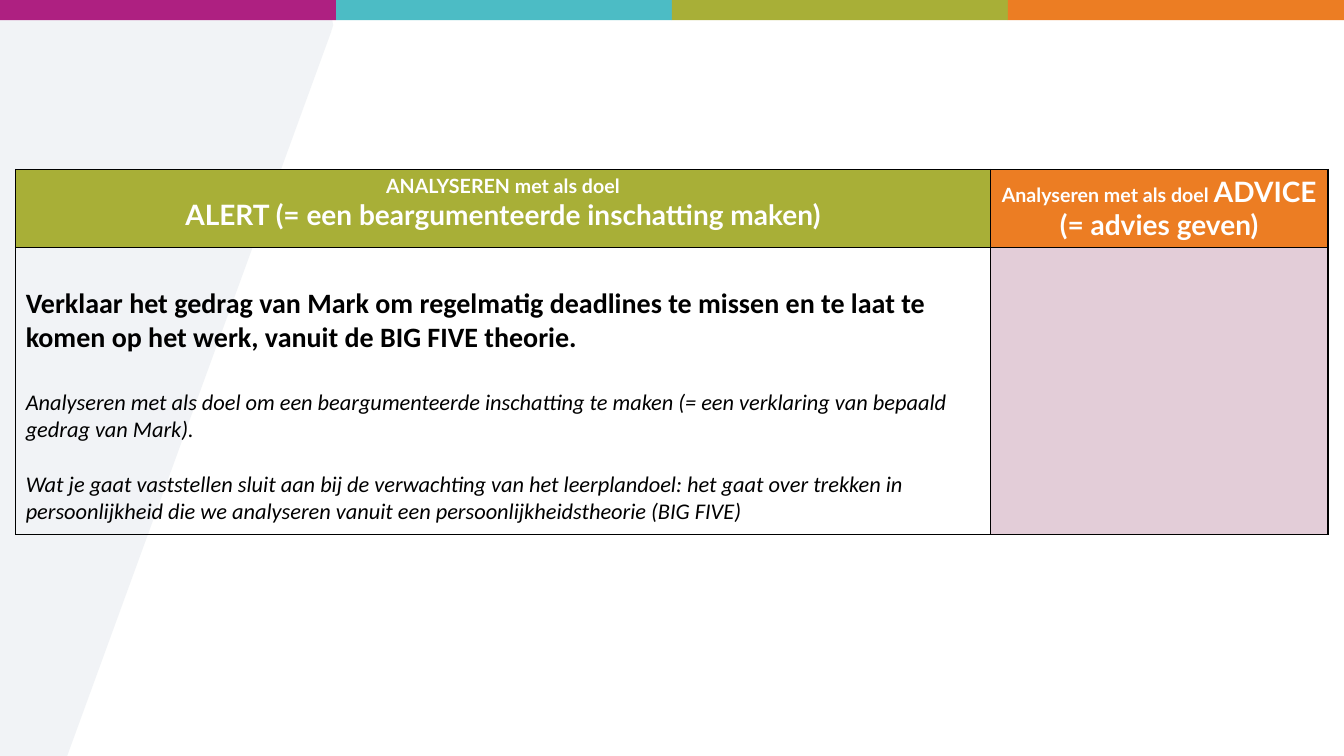
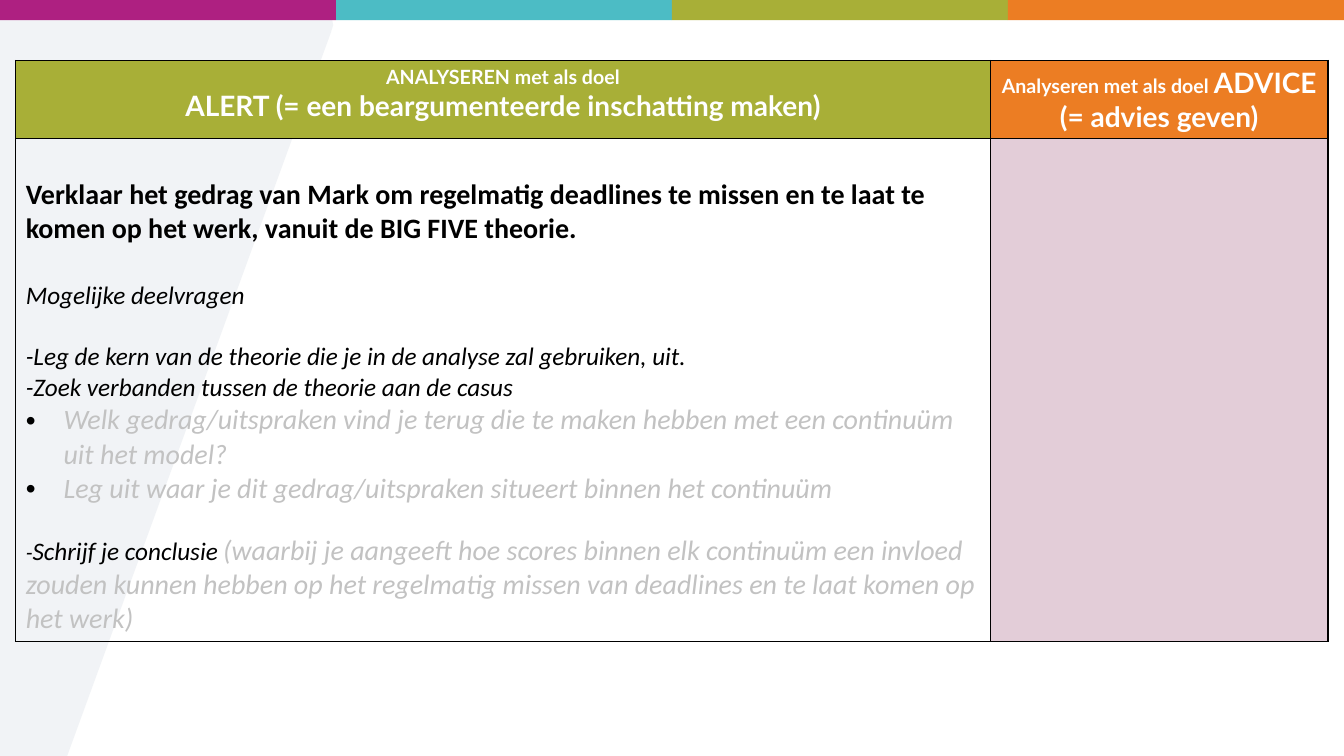
from lxml import etree
from pptx import Presentation
from pptx.dml.color import RGBColor
from pptx.enum.shapes import MSO_SHAPE
from pptx.enum.text import PP_ALIGN
from pptx.oxml.ns import qn
from pptx.util import Pt

RECT = MSO_SHAPE.RECTANGLE
LEFT = PP_ALIGN.LEFT
CENTER = PP_ALIGN.CENTER

WIDE, HIGH = 960, 540
BAND = 14.4
BLACK, WHITE, GRAY = "000000", "FFFFFF", "C2C2C2"
GREEN, ORANGE, PINK = "A8AF37", "EC7D23", "E3CDD8"
BANDS = ["AE2081", "4CBCC5", GREEN, ORANGE]
WEDGE = "E8ECF0"
EDGE = [(236.2, 23.8), (238, 18), (237, 12), (232, 6), (222.5, 3.6),
        (0, 3.6), (0, HIGH), (48, HIGH)]


def color(code):
    return RGBColor.from_string(code)


def child(parent, tag, **attrs):
    return etree.SubElement(parent, qn(tag), **attrs)


def run(text, size=20, tint=BLACK, bold=False, slant=True, font="Calibri"):
    def write(para):
        part = para.add_run()
        part.text = text
        face = part.font
        face.name, face.size = font, Pt(size)
        face.bold, face.italic = bold, slant
        face.color.rgb = color(tint)
    return write


def para(*runs, align=LEFT, gap=0, dot=False):
    return runs, align, gap, dot


def label(text, size):
    return run(text, size, WHITE, bold=True, slant=False, font="Lato")


class Deck:
    def __init__(self):
        self.file = Presentation()
        self.file.slide_width = Pt(WIDE)
        self.file.slide_height = Pt(HIGH)
        self.slide = None

    def page(self):
        self.slide = self.file.slides.add_slide(self.file.slide_layouts[6])
        self.wedge()
        width = WIDE / len(BANDS)
        for i, code in enumerate(BANDS):
            self.band(i * width, width, code)

    def paint(self, shape, code):
        shape.shadow.inherit = False
        shape.fill.solid()
        shape.fill.fore_color.rgb = color(code)
        shape.line.fill.background()

    def wedge(self):
        points = [(Pt(x), Pt(y)) for x, y in EDGE]
        path = self.slide.shapes.build_freeform(*points[0])
        path.add_line_segments(points[1:])
        shape = path.convert_to_shape()
        self.paint(shape, WEDGE)
        tint = shape.fill._xPr.find(".//" + qn("a:srgbClr"))
        child(tint, "a:alpha", val="59000")

    def band(self, left, width, code):
        shape = self.slide.shapes.add_shape(RECT, Pt(left), 0, Pt(width), Pt(BAND))
        self.paint(shape, code)

    def cell(self, cell, paras, fill=None, top=3.6):
        props = cell._tc.get_or_add_tcPr()
        for side in ("L", "R", "T", "B"):
            line = child(props, "a:ln" + side, w=str(Pt(1)))
            child(child(line, "a:solidFill"), "a:srgbClr", val=BLACK)
        if fill:
            cell.fill.solid()
            cell.fill.fore_color.rgb = color(fill)
        else:
            cell.fill.background()
        cell.margin_top = Pt(top)
        frame = cell.text_frame
        for i, (runs, align, gap, dot) in enumerate(paras):
            line = frame.add_paragraph() if i else frame.paragraphs[0]
            line.alignment = align
            if gap:
                line.space_before = Pt(gap)
            if dot:
                self.dot(line)
            for write in runs:
                write(line)

    def dot(self, line):
        props = line._p.get_or_add_pPr()
        props.set("marL", str(Pt(27)))
        props.set("indent", str(Pt(-27)))
        child(child(props, "a:buClr"), "a:srgbClr", val=BLACK)
        child(props, "a:buFont", typeface="Arial")
        child(props, "a:buChar", char="•")

    def table(self, top, depth, paras):
        cols, rows = (696.2, 241.2), (55.6, depth)
        frame = self.slide.shapes.add_table(
            2, 2, Pt(11.2), Pt(top), Pt(sum(cols)), Pt(sum(rows)))
        grid = frame.table
        grid.first_row = grid.horz_banding = False
        for col, width in zip(grid.columns, cols):
            col.width = Pt(width)
        for row, height in zip(grid.rows, rows):
            row.height = Pt(height)
        alert = [
            para(label("ANALYSEREN met als doel", 14), align=CENTER),
            para(label("ALERT (= een beargumenteerde inschatting maken)", 20),
                 align=CENTER),
        ]
        advice = [para(label("Analyseren met als doel ", 14),
                       label("ADVICE (= advies geven)", 20), align=CENTER)]
        task = para(run("Verklaar het gedrag van Mark om regelmatig deadlines te "
                        "missen en te laat te komen op het werk, vanuit de BIG FIVE "
                        "theorie.", bold=True, slant=False))
        self.cell(grid.cell(0, 0), alert, GREEN)
        self.cell(grid.cell(0, 1), advice, ORANGE)
        self.cell(grid.cell(1, 0), [task] + paras, top=28)
        self.cell(grid.cell(1, 1), [], PINK)


def main():
    deck = Deck()
    deck.page()
    deck.table(121, 205, [
        para(run("Analyseren met als doel om een beargumenteerde inschatting te "
                 "maken (= een verklaring van bepaald gedrag van Mark).", 16), gap=24.4),
        para(run("Wat je gaat vaststellen sluit aan bij de verwachting van het "
                 "leerplandoel: het gaat over trekken in persoonlijkheid die we "
                 "analyseren vanuit een persoonlijkheidstheorie (BIG FIVE)", 16),
             gap=19.5),
    ])
    deck.page()
    deck.table(43.2, 359.5, [
        para(run("Mogelijke deelvragen", 18), gap=24.4),
        para(run("-Leg de kern van de theorie die je in de analyse zal "
                 "gebruiken, uit.", 18), gap=22),
        para(run("-Zoek verbanden tussen de theorie aan de casus", 18)),
        para(run("Welk gedrag/uitspraken vind je terug die te maken hebben met "
                 "een continuüm uit het model?", tint=GRAY), dot=True),
        para(run("Leg uit waar je dit gedrag/uitspraken situeert binnen het "
                 "continuüm", tint=GRAY), dot=True),
        para(run("-", 16), run("Schrijf je conclusie", 18), run(" ", 16),
             run("(waarbij je aangeeft hoe scores binnen elk continuüm een invloed "
                 "zouden kunnen hebben op het regelmatig missen van deadlines en te "
                 "laat komen op het werk)", tint=GRAY), gap=19.5),
    ])
    deck.file.save("out.pptx")


if __name__ == "__main__":
    main()
